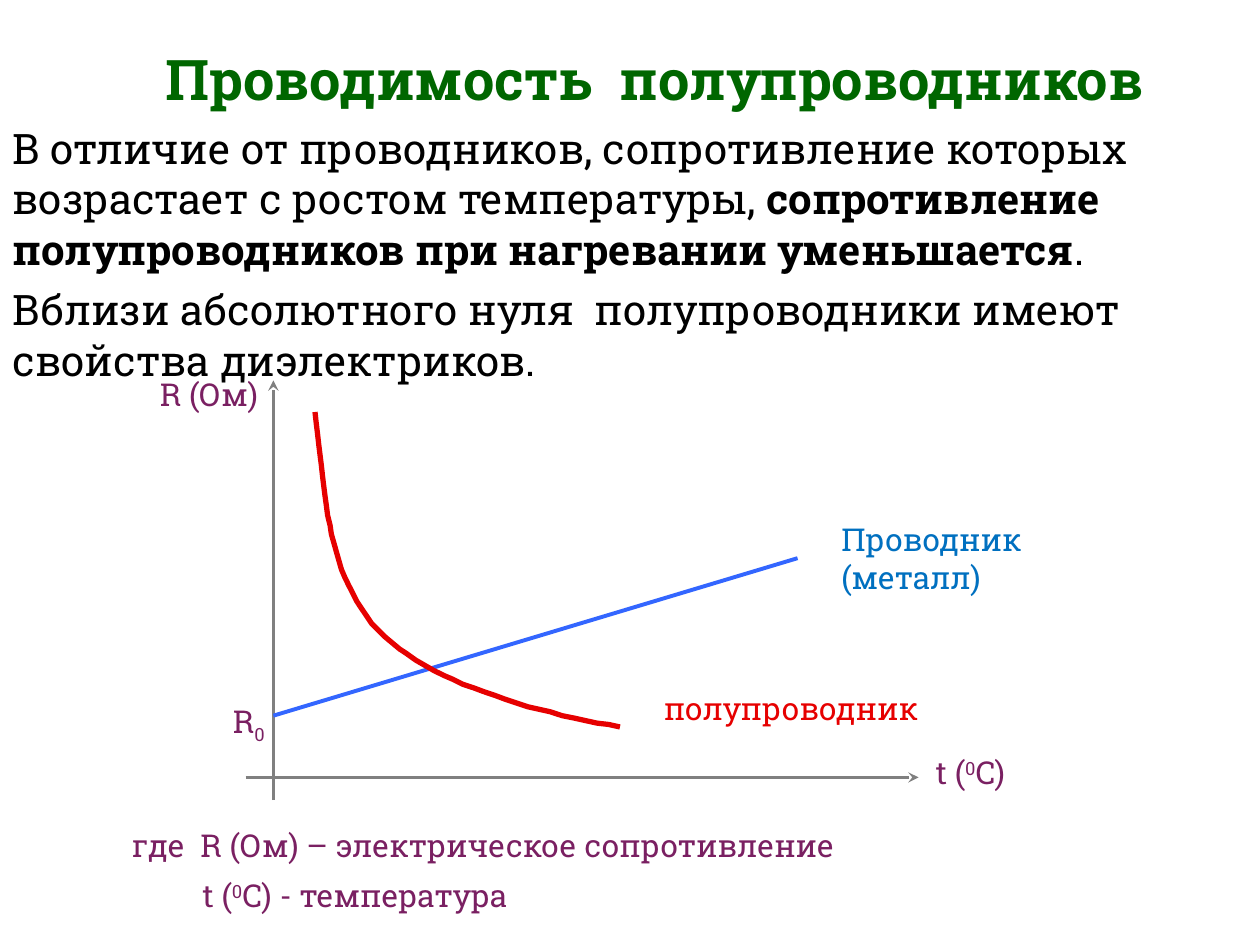
from dataclasses import dataclass

from lxml.etree import SubElement as Sub
from pptx import Presentation
from pptx.dml.color import RGBColor as RGB
from pptx.enum.shapes import MSO_CONNECTOR as Conn
from pptx.enum.text import MSO_ANCHOR as Anchor, MSO_AUTO_SIZE as Auto, PP_ALIGN as Align
from pptx.oxml.ns import qn
from pptx.util import Pt

PX = 9144  # EMU per px, 100 px to the inch


@dataclass(frozen=True)
class Theme:
    face: str = "Roboto Slab"
    head: str = "006600"
    ink: str = "000000"
    note: str = "7A2062"
    axis: str = "808080"
    metal: str = "3366FF"
    name: str = "0070C0"
    semi: str = "E60000"
    big: int = 32
    mid: int = 24
    small: int = 18


def bezier(start, ctrl1, ctrl2, end, steps=24):
    """Points of a cubic curve after its start."""
    for i in range(1, steps + 1):
        t = i / steps
        u = 1 - t
        yield tuple(
            round(u**3 * a + 3 * u * u * t * b + 3 * u * t * t * c + t**3 * d, 2)
            for a, b, c, d in zip(start, ctrl1, ctrl2, end)
        )


class Board:
    def __init__(self, deck, theme):
        self.theme = theme
        self.slide = deck.slides.add_slide(deck.slide_layouts[1])
        self.shapes = self.slide.shapes

    def place(self, shape, box):
        shape.left, shape.top, shape.width, shape.height = (v * PX for v in box)

    def style(self, para, size, color, bold=False):
        font = para.font
        font.name, font.size, font.bold = self.theme.face, Pt(size), bold
        font.color.rgb = RGB.from_string(color)

    def title(self, box, text):
        shape = self.shapes.title
        self.place(shape, box)
        frame = shape.text_frame
        frame.auto_size, frame.vertical_anchor = Auto.NONE, Anchor.MIDDLE
        frame.text = text
        para = frame.paragraphs[0]
        para.alignment = Align.CENTER
        self.style(para, self.theme.big, self.theme.head, True)

    def body(self, box, paras):
        """Each paragraph is a list of (text, bold) runs."""
        shape = self.slide.placeholders[1]
        self.place(shape, box)
        frame = shape.text_frame
        frame.auto_size, frame.vertical_anchor = Auto.NONE, Anchor.TOP
        for i, runs in enumerate(paras):
            para = frame.add_paragraph() if i else frame.paragraphs[0]
            para.space_before, para.space_after = Pt(0), Pt(6)
            props = para._p.get_or_add_pPr()
            props.set("marL", "0")
            props.set("indent", "0")
            Sub(props, qn("a:buNone"))
            self.style(para, self.theme.mid, self.theme.ink)
            for text, bold in runs:
                run = para.add_run()
                run.text = text
                if bold:
                    run.font.bold = True

    def label(self, box, *lines, color=None, inset=0):
        """Each line is a list of (text, baseline) runs; later lines are inset."""
        shape = self.shapes.add_textbox(*(v * PX for v in box))
        frame = shape.text_frame
        frame.word_wrap = True
        for i, runs in enumerate(lines):
            para = frame.add_paragraph() if i else frame.paragraphs[0]
            if i:
                para.space_before = Pt(7)
                para._p.get_or_add_pPr().set("marL", str(inset * PX))
            self.style(para, self.theme.small, color or self.theme.note)
            for text, shift in runs:
                run = para.add_run()
                run.text = text
                if shift:
                    run._r.get_or_add_rPr().set("baseline", str(shift * 1000))

    def line(self, start, end, color, width, arrow=False):
        ends = (v * PX for v in (*start, *end))
        link = self.shapes.add_connector(Conn.STRAIGHT, *ends)
        link.line.color.rgb = RGB.from_string(color)
        link.line.width = Pt(width)
        if arrow:
            Sub(link.line._get_or_add_ln(), qn("a:tailEnd"), type="stealth")
        Sub(link._element.spPr, qn("a:effectLst"))

    def curve(self, start, parts, color, width):
        """Each part is two control points and an end."""
        pen = self.shapes.build_freeform(*start, scale=PX)
        for part in parts:
            pen.add_line_segments(list(bezier(start, *part)), close=False)
            start = part[-1]
        shape = pen.convert_to_shape()
        shape.shadow.inherit = False
        shape.fill.background()
        shape.line.color.rgb = RGB.from_string(color)
        shape.line.width = Pt(width)


def main():
    deck = Presentation()
    deck.slide_width, deck.slide_height = 1000 * PX, 750 * PX
    theme = Theme()
    board = Board(deck, theme)

    # Title and text
    board.title((20, 47, 1000, 83), "Проводимость  полупроводников\v")
    board.body((0, 92, 1000, 220), [
        [("В отличие от проводников, сопротивление которых возрастает "
          "с ростом температуры, ", False),
         ("сопротивление полупроводников при нагревании уменьшается", True),
         (".", False)],
        [("Вблизи абсолютного нуля  полупроводники имеют свойства диэлектриков.", False)],
    ])

    # Axes
    degree = [("t (", 0), ("0", 30)]
    board.line((217, 635), (217, 302), theme.axis, 1.5, arrow=True)
    board.line((195, 617), (729, 617), theme.axis, 1.5, arrow=True)
    board.label((117, 293, 100, 40), [("R (Ом)", 0)])
    board.label((733, 593, 100, 40), degree + [("C)", 0)])

    # Metal: straight line from R0
    board.line((217, 568), (633, 443), theme.metal, 2.25)
    board.label((175, 552, 58, 40), [("R", 0), ("0", -25)])
    board.label((658, 408, 183, 71), [("Проводник (металл)", 0)], color=theme.name)

    # Semiconductor: falling curve
    board.curve((250, 327), [
        ((259, 397), (260, 458), (300, 500)),
        ((340, 542), (420, 564), (492, 577)),
    ], theme.semi, 3)
    board.label((517, 542, 233, 40), [("полупроводник", 0)], color=theme.semi)

    # Legend
    board.label(
        (95, 651, 791, 131),
        [("где  R (Ом) – электрическое сопротивление", 0)],
        degree + [("C) - температура", 0)],
        inset=56,
    )

    deck.save("out.pptx")


if __name__ == "__main__":
    main()
